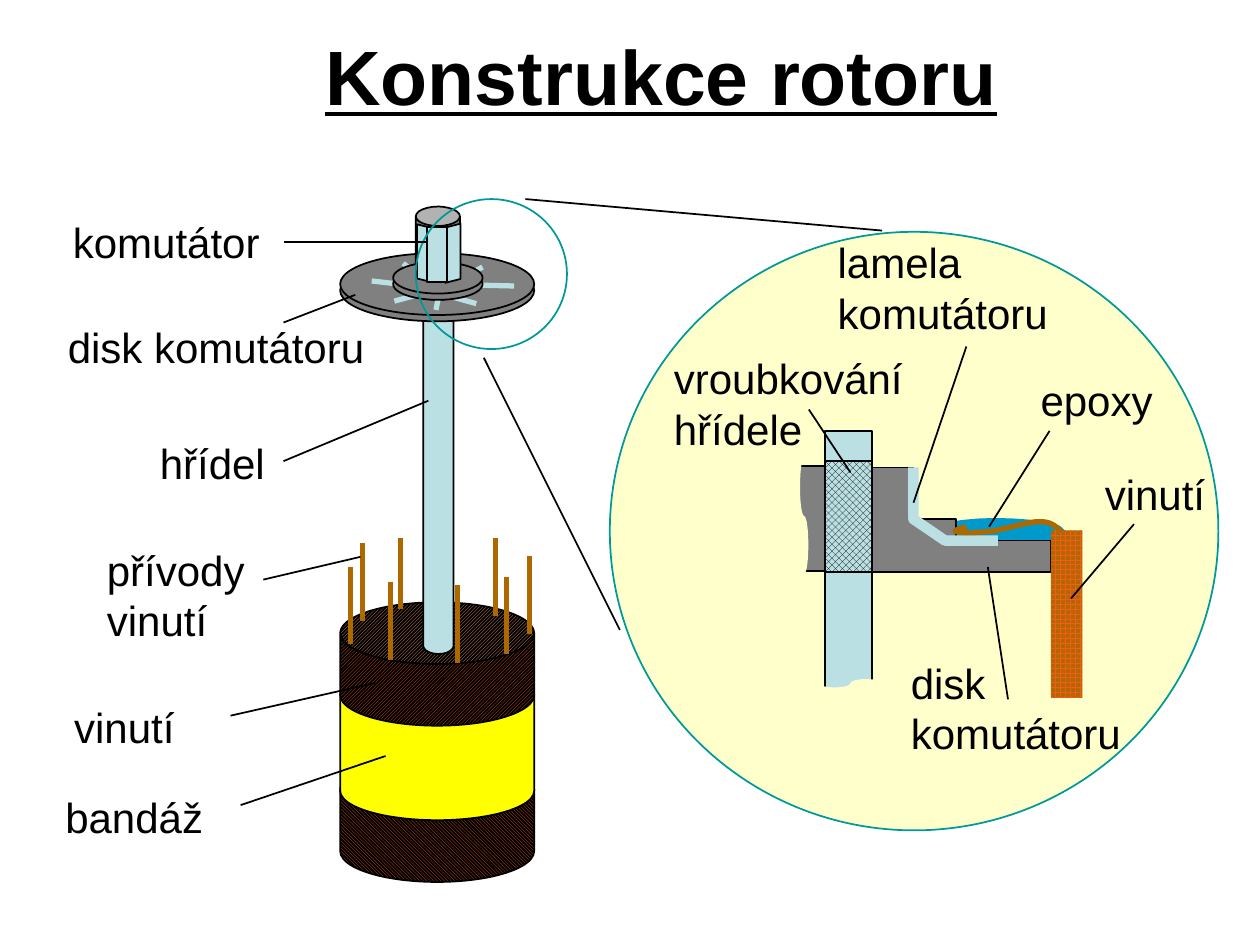
from lxml import etree
from pptx import Presentation
from pptx.dml.color import RGBColor
from pptx.enum.dml import MSO_PATTERN
from pptx.enum.shapes import MSO_CONNECTOR, MSO_SHAPE
from pptx.enum.text import MSO_ANCHOR, MSO_AUTO_SIZE, PP_ALIGN
from pptx.oxml.ns import qn
from pptx.util import Inches, Pt

STRAIGHT = MSO_CONNECTOR.STRAIGHT
RECT = MSO_SHAPE.RECTANGLE
OVAL = MSO_SHAPE.OVAL
CAN = MSO_SHAPE.CAN
SLANT = MSO_SHAPE.PARALLELOGRAM
TAPE = MSO_SHAPE.FLOWCHART_PUNCHED_TAPE
DOWN_DIAGONAL = MSO_PATTERN.DARK_DOWNWARD_DIAGONAL
UP_DIAGONAL = MSO_PATTERN.DARK_UPWARD_DIAGONAL
SPHERE = MSO_PATTERN.SPHERE
DIAMOND = MSO_PATTERN.OUTLINED_DIAMOND

COLORS = {
    "black": "000000", "white": "FFFFFF", "cream": "FFFFCC", "teal": "009999",
    "steel": "BBE0E3", "gray": "808080", "copper": "AD6900", "coil": "F35B1B",
    "band": "FFFF00", "epoxy": "0099CC",
}
FONT = {"name": "Arial", "size": Pt(24), "bold": False, "underline": False}
TITLE_FONT = {"name": "Arial", "size": Pt(44), "bold": True, "underline": True}

LABELS = [
    ("disk komutátoru", 0.44, 2.5, 2.56, 0.5, False),
    ("komutátor", 0.48, 1.67, 1.68, 0.5, False),
    ("přívody vinutí", 0.75, 4.27, 1.33, 0.9, True),
    ("vinutí", 0.49, 5.52, 1, 0.5, False),
    ("hřídel", 1.17, 3.42, 1.04, 0.5, False),
    ("bandáž", 0.42, 6.23, 1.3, 0.5, False),
    ("disk\nkomutátoru", 7.13, 5.17, 2.29, 0.9, True),
    ("vinutí", 8.67, 3.67, 1, 0.5, True),
    ("lamela\nkomutátoru", 6.55, 1.83, 1.87, 0.9, False),
    ("epoxy", 8.16, 2.92, 1.09, 0.5, False),
    ("vroubkování\nhřídele", 5.25, 2.75, 2.67, 0.9, True),
]
LEADERS = [
    (2.82, 2.34, 2.25, 2.56), (2.25, 1.92, 3.39, 1.92),
    (3.4, 3.18, 2.25, 3.66), (2.09, 4.6, 2.86, 4.42),
    (1.83, 5.68, 2.98, 5.42), (1.91, 6.39, 3.06, 6),
    (7.67, 2.75, 7.25, 3.99), (9, 4.16, 8.5, 4.75),
    (8, 5.55, 7.84, 4.5), (8.33, 3.42, 7.85, 4.18),
    (6.42, 3.25, 6.75, 3.75), (4.17, 1.58, 7, 1.83),
    (3.84, 2.84, 4.92, 5),
]
WIRES = [
    (3.53, 4.78, 4.17), (3.18, 4.83, 4.27), (2.88, 4.93, 4.31),
    (3.93, 4.89, 4.27), (3.63, 5.26, 4.64), (3.1, 5.24, 4.62),
    (2.78, 5.11, 4.5), (4.2, 5.03, 4.41), (4.02, 5.19, 4.58),
]
BACK_SLOTS = [
    (3.67, 2.26, 4.08, 2.27), (2.95, 2.23, 3.3, 2.27),
    (3.2, 2.09, 3.36, 2.22), (3.6, 2.24, 3.83, 2.12),
]
FRONT_SLOTS = [
    (3.6, 2.36, 3.78, 2.41), (3.35, 2.33, 3.13, 2.39),
    (3.49, 2.31, 3.46, 2.46),
]
EPOXY = [
    (7.5, 4.18), (7.56, 4.13), (7.61, 4.13), (7.71, 4.12),
    (7.81, 4.11), (7.99, 4.11), (8.11, 4.12),
    (8.23, 4.13), (8.37, 4.14), (8.42, 4.18),
    (8.47, 4.23), (8.59, 4.34), (8.42, 4.38),
    (8.25, 4.43), (7.56, 4.48), (7.4, 4.45),
    (7.25, 4.42), (7.45, 4.24), (7.5, 4.18),
]
LEAD = [
    (8.42, 4.22), (8.38, 4.18), (8.35, 4.14), (8.25, 4.14),
    (8.15, 4.14), (7.95, 4.21), (7.84, 4.22),
    (7.72, 4.23), (7.61, 4.23), (7.59, 4.22),
    (7.56, 4.21), (7.61, 4.2), (7.67, 4.18),
]
DISK = [
    (6.92, 3.71), (7.25, 3.71), (7.25, 4.12), (7.59, 4.12),
    (7.59, 4.29), (8.34, 4.29), (8.34, 4.54), (6.92, 4.54),
]
LAMELLA = [(7.25, 3.71), (7.25, 4.12), (7.5, 4.29), (7.92, 4.29)]


def rgb(name):
    return RGBColor.from_string(COLORS[name])


def paint(sp, fill, line, width=1):
    sp.shadow.inherit = False
    if fill is None:
        sp.fill.background()
    elif isinstance(fill, tuple):
        sp.fill.patterned()
        sp.fill.pattern, fore, back = fill
        sp.fill.fore_color.rgb = rgb(fore)
        sp.fill.back_color.rgb = rgb(back)
    else:
        sp.fill.solid()
        sp.fill.fore_color.rgb = rgb(fill)
    if line is None:
        sp.line.fill.background()
    else:
        sp.line.color.rgb = rgb(line)
        sp.line.width = Pt(width)


def add_shape(s, kind, box, fill, line="black", adj=None, rotation=0, flip=False):
    sp = s.shapes.add_shape(kind, *map(Inches, box))
    paint(sp, fill, line)
    sp.rotation = rotation
    if adj is not None:
        sp.adjustments[0] = adj
    if flip:
        sp.element.spPr.find(qn("a:xfrm")).set("flipH", "1")


def add_line(s, ends, color="black", width=1):
    line = s.shapes.add_connector(STRAIGHT, *map(Inches, ends))
    line.line.color.rgb = rgb(color)
    line.line.width = Pt(width)
    etree.SubElement(line.element.spPr, qn("a:effectLst"))


def add_path(s, points, fill=None, line=None, width=1, close=False):
    pts = [(Inches(x), Inches(y)) for x, y in points]
    fb = s.shapes.build_freeform(*pts[0], scale=1.0)
    fb.add_line_segments(pts[1:], close=close)
    paint(fb.convert_to_shape(), fill, line, width)


def curve(points, steps=10):
    result = [points[0]]
    for i in range(0, len(points) - 1, 3):
        for n in range(1, steps + 1):
            t = n / steps
            weights = ((1 - t) ** 3, 3 * t * (1 - t) ** 2, 3 * t * t * (1 - t), t ** 3)
            result.append(tuple(
                sum(w * p[axis] for w, p in zip(weights, points[i:i + 4]))
                for axis in (0, 1)))
    return result


def format_text(tf, font):
    for p in tf.paragraphs:
        for r in p.runs:
            for key, value in font.items():
                setattr(r.font, key, value)
            r.font.color.rgb = rgb("black")


def add_label(s, text, x, y, w, h, wrap):
    tf = s.shapes.add_textbox(*map(Inches, (x, y, w, h))).text_frame
    tf.text = text
    tf.word_wrap = wrap
    tf.auto_size = MSO_AUTO_SIZE.SHAPE_TO_FIT_TEXT
    format_text(tf, FONT)


def set_title(s, text):
    sp = s.shapes.title
    box = {"left": 2.01, "top": 0.13, "width": 6.48, "height": 0.93}
    for key, value in box.items():
        setattr(sp, key, Inches(value))
    sp.fill.solid()
    sp.fill.fore_color.rgb = rgb("white")
    tf = sp.text_frame
    tf.text = text
    tf.auto_size = MSO_AUTO_SIZE.NONE
    tf.vertical_anchor = MSO_ANCHOR.MIDDLE
    tf.paragraphs[0].alignment = PP_ALIGN.CENTER
    format_text(tf, TITLE_FONT)


def draw_rotor(s):
    add_shape(s, CAN, (2.7, 6.02, 1.54, 0.98), (DOWN_DIAGONAL, "coil", "black"), adj=0.5)
    add_shape(s, CAN, (2.7, 5.28, 1.54, 1.23), "band", adj=0.38)
    add_shape(s, CAN, (2.7, 4.78, 1.54, 0.98), (UP_DIAGONAL, "coil", "black"), adj=0.5)
    for x, bottom, top in WIRES:
        add_line(s, (x, bottom, x, top), "copper", 3)
    add_shape(s, CAN, (3.36, 2.24, 0.24, 2.95), "steel", adj=0.54)
    for top in (2.06, 2.01):
        add_shape(s, OVAL, (2.7, top, 1.54, 0.49), "gray")
    for slot in BACK_SLOTS:
        add_line(s, slot, "steel", 3)
    add_shape(s, CAN, (3.3, 1.64, 0.35, 0.74), "gray", adj=0.44)
    for slot in FRONT_SLOTS:
        add_line(s, slot, "steel", 3)
    for top in (2.13, 2.08):
        add_shape(s, OVAL, (3.12, top, 0.71, 0.25), "gray")
    add_shape(s, SLANT, (3.14, 1.95, 0.46, 0.12), "steel", adj=0.25, rotation=270)
    add_shape(s, SLANT, (3.36, 1.95, 0.47, 0.12), "steel", adj=0.26, rotation=90, flip=True)
    add_shape(s, RECT, (3.39, 1.8, 0.16, 0.44), "steel")
    add_shape(s, OVAL, (3.3, 1.58, 1.2, 1.19), None, "teal")


def draw_detail(s):
    add_path(s, curve(EPOXY), fill="epoxy", close=True)
    add_path(s, DISK, fill="gray", line="black")
    add_path(s, LAMELLA, line="steel", width=6)
    add_shape(s, RECT, (8.34, 4.21, 0.25, 1.33), (SPHERE, "coil", "copper"), None)
    add_path(s, curve(LEAD), line="copper", width=3)
    add_shape(s, RECT, (6.55, 3.42, 0.37, 2.12), "steel")
    add_shape(s, RECT, (6.55, 3.66, 0.37, 0.88), (DIAMOND, "black", "steel"))
    add_shape(s, RECT, (6.31, 3.7, 0.24, 0.83), "gray")
    add_shape(s, TAPE, (5.79, 3.93, 0.92, 0.33), "cream", None, rotation=90)
    add_shape(s, TAPE, (6.5, 5.39, 0.5, 0.33), "cream", None)


def main():
    prs = Presentation()
    prs.slide_width, prs.slide_height = Inches(10), Inches(7.5)
    s = prs.slides.add_slide(prs.slide_layouts[5])
    set_title(s, "Konstrukce rotoru")
    add_shape(s, OVAL, (4.84, 1.84, 4.83, 4.75), "cream", "teal")
    draw_rotor(s)
    draw_detail(s)
    for label in LABELS:
        add_label(s, *label)
    for leader in LEADERS:
        add_line(s, leader)
    prs.save("out.pptx")


if __name__ == "__main__":
    main()
